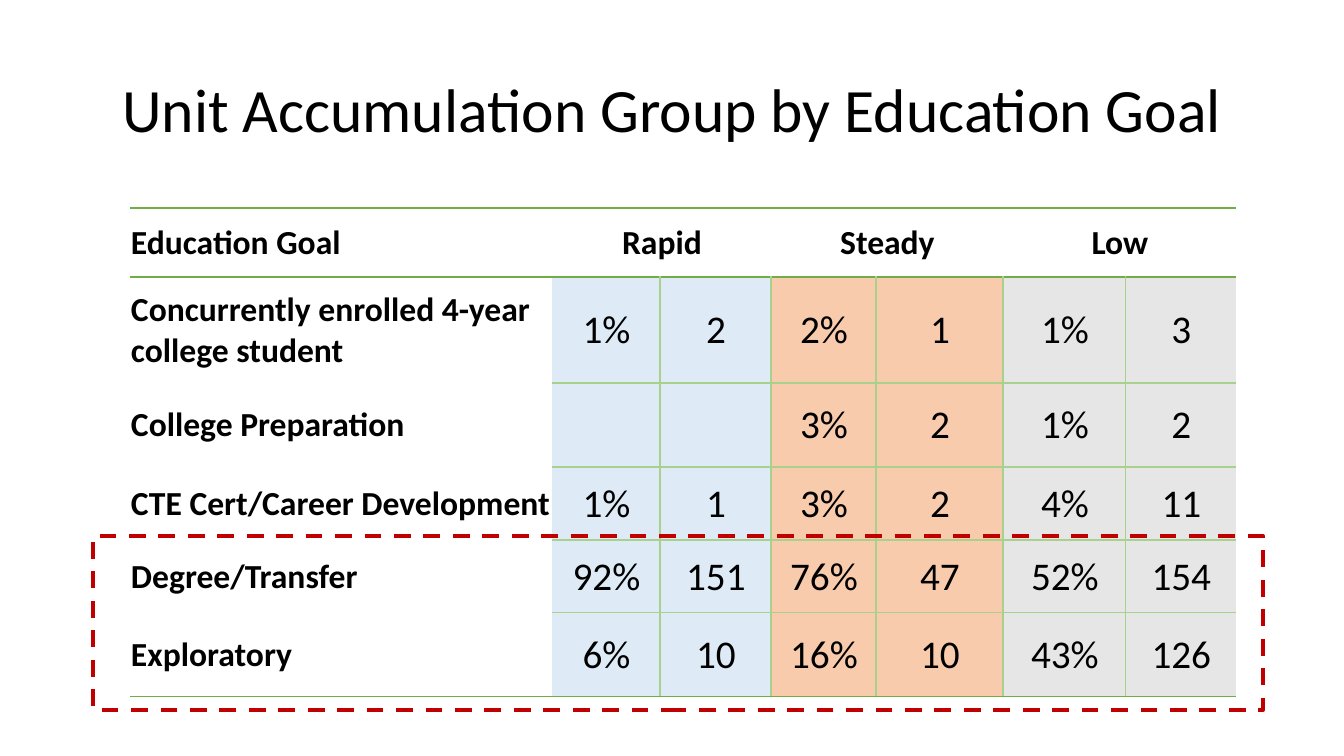
"""Build the slide on unit accumulation groups by education goal."""
from lxml.etree import SubElement
from pptx import Presentation
from pptx.dml.color import RGBColor
from pptx.enum.dml import MSO_LINE
from pptx.enum.shapes import MSO_SHAPE
from pptx.enum.text import MSO_ANCHOR, PP_ALIGN
from pptx.oxml.ns import qn
from pptx.util import Pt

TITLE = "Unit Accumulation Group by Education Goal"
HEAD = ["Education Goal", "Rapid", "", "Steady", "", "Low", ""]
BODY = [
    ["Concurrently enrolled 4-year college student", "1%", "2", "2%", "1", "1%", "3"],
    ["College Preparation", "", "", "3%", "2", "1%", "2"],
    ["CTE Cert/Career Development", "1%", "1", "3%", "2", "4%", "11"],
    ["Degree/Transfer", "92%", "151", "76%", "47", "52%", "154"],
    ["Exploratory", "6%", "10", "16%", "10", "43%", "126"],
]
FILLS = ["DEEBF7", "F8CBAD", "E7E6E6"]
RULE, GRID, RED = "70AD47", "A9D18E", "C00000"
COLS = [422, 108, 111, 105, 127, 123, 110]
ROWS = [69, 106, 84, 73, 73, 84]
WIDE, HIGH = 1344, 756
PLAIN = "{2D5ABB26-0587-4C30-8999-92F81FD0307C}"


def px(n):
    return round(n * 12192000 / WIDE)


def box(*sides):
    return [px(n) for n in sides]


def color(code):
    return RGBColor.from_string(code)


def write(frame, text, size, bold=False, align=PP_ALIGN.CENTER):
    para = frame.paragraphs[0]
    para.text = text
    para.alignment = align
    font = para.font
    font.name, font.size, font.bold = "Calibri", Pt(size), bold
    font.color.rgb = color("000000")
    return para


def edge(cell, side, code):
    line = SubElement(cell._tc.get_or_add_tcPr(), qn("a:ln" + side), w=str(Pt(1)))
    if code:
        fill = SubElement(line, qn("a:solidFill"))
        SubElement(fill, qn("a:srgbClr"), val=code)
    else:
        SubElement(line, qn("a:noFill"))


def border(cell, row, col):
    inner = row > 0 and col > 0
    last = row == len(BODY)
    edge(cell, "L", GRID if inner and col > 1 else None)
    edge(cell, "R", GRID if inner and col < len(COLS) - 1 else None)
    edge(cell, "T", RULE if row < 1 or (row == 1) else GRID if inner else None)
    edge(cell, "B", RULE if row < 1 or last else GRID if inner else None)


def fill_table(slide):
    frame = slide.shapes.add_table(
        len(ROWS), len(COLS), *box(130, 208, sum(COLS), sum(ROWS)))
    table = frame.table
    table.first_row = table.horz_banding = False
    table._tbl.tblPr.find(qn("a:tableStyleId")).text = PLAIN
    for part, width in zip(table.columns, COLS):
        part.width = px(width)
    for part, height in zip(table.rows, ROWS):
        part.height = px(height)
    for row, texts in enumerate([HEAD] + BODY):
        for col, text in enumerate(texts):
            cell = table.cell(row, col)
            border(cell, row, col)
            cell.margin_left = cell.margin_top = px(1)
            cell.margin_right = cell.margin_bottom = 0
            cell.vertical_anchor = MSO_ANCHOR.MIDDLE
            bold = row == 0 or col == 0
            align = PP_ALIGN.CENTER if col else PP_ALIGN.LEFT
            write(cell.text_frame, text, 24 if bold else 28, bold, align)
            if bold:
                cell.fill.background()
            else:
                cell.fill.solid()
                cell.fill.fore_color.rgb = color(FILLS[(col - 1) // 2])
    for col in range(1, len(COLS), 2):
        table.cell(0, col).merge(table.cell(0, col + 1))


def main():
    deck = Presentation()
    deck.slide_width, deck.slide_height = px(WIDE), px(HIGH)
    slide = deck.slides.add_slide(deck.slide_layouts[6])

    title = slide.shapes.add_textbox(*box(93, 40, 1159, 146)).text_frame
    title.word_wrap = True
    title.vertical_anchor = MSO_ANCHOR.MIDDLE
    write(title, TITLE, 44).line_spacing = 0.9

    fill_table(slide)

    mark = slide.shapes.add_shape(MSO_SHAPE.RECTANGLE, *box(93, 536, 1170, 174))
    mark.shadow.inherit = False
    mark.fill.background()
    mark.line.color.rgb = color(RED)
    mark.line.width = Pt(3)
    mark.line.dash_style = MSO_LINE.DASH
    deck.save("out.pptx")


if __name__ == "__main__":
    main()
